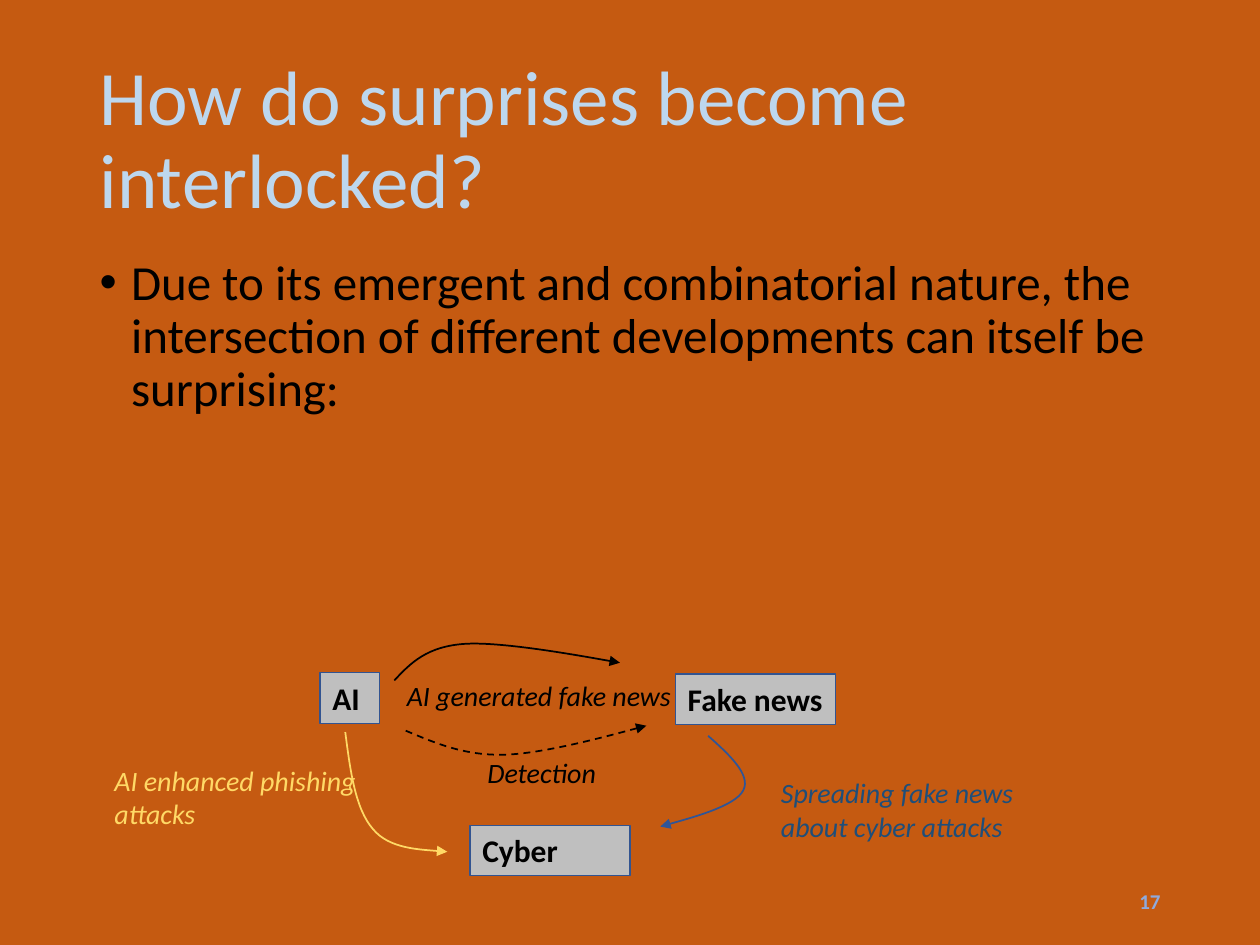
from typing import NamedTuple

from lxml.etree import SubElement
from pptx import Presentation
from pptx.dml.color import RGBColor
from pptx.enum.dml import MSO_LINE
from pptx.enum.shapes import MSO_SHAPE
from pptx.enum.text import MSO_ANCHOR, MSO_AUTO_SIZE, PP_ALIGN
from pptx.oxml.ns import qn
from pptx.util import Emu, Inches, Pt

COLUMNS, ROWS = 100, 75
CELL = Inches(0.1)
FONT = "Calibri"

ORANGE = RGBColor(0xC5, 0x5A, 0x11)
PALE_BLUE = RGBColor(0xBD, 0xD7, 0xEE)
SOFT_BLUE = RGBColor(0x8F, 0xAA, 0xDC)
BORDER_BLUE = RGBColor(0x32, 0x54, 0x91)
ARROW_BLUE = RGBColor(0x2F, 0x55, 0x97)
DEEP_BLUE = RGBColor(0x1F, 0x4E, 0x79)
YELLOW = RGBColor(0xFF, 0xD9, 0x66)
GRAY = RGBColor(0xBF, 0xBF, 0xBF)
BLACK = RGBColor(0, 0, 0)


class Area(NamedTuple):
    column: float
    row: float
    columns: float
    rows: float


class Topic(NamedTuple):
    text: str
    area: Area
    wrap: bool = True


class Influence(NamedTuple):
    text: str
    area: Area
    color: RGBColor
    arrow_color: RGBColor
    curve: list[tuple[float, float]]
    dashed: bool = False
    wrap: bool = True


TOPICS = [
    Topic("AI", Area(25.4, 53.4, 4.7, 4)),
    Topic("Fake news", Area(53.6, 53.5, 12.7, 4), wrap=False),
    Topic("Cyber", Area(37.3, 65.5, 12.7, 4)),
]

INFLUENCES = [
    Influence("AI generated fake news", Area(31.3, 53.4, 23.2, 3.7), BLACK, BLACK,
              [(31.3, 54), (32.6, 52.6), (33.9, 51.3), (36.9, 51.1),
               (39.9, 50.9), (49.2, 52.6), (49.2, 52.6)], wrap=False),
    Influence("AI enhanced phishing attacks", Area(8.1, 60.1, 23.2, 6.4), YELLOW, YELLOW,
              [(27.4, 58.1), (27.8, 61.2), (28.2, 64.2), (29.6, 65.8),
               (30.9, 67.4), (35.5, 67.6), (35.5, 67.6)]),
    Influence("Detection", Area(37.7, 59.5, 12, 3.7), BLACK, BLACK,
              [(32.2, 58), (34.6, 59), (36.9, 60), (40.1, 59.9),
               (43.3, 59.8), (51.3, 57.6), (51.3, 57.6)], dashed=True),
    Influence("Spreading fake news about cyber attacks", Area(61, 61.1, 25.6, 6.4),
              DEEP_BLUE, ARROW_BLUE,
              [(56.2, 58.4), (57.9, 59.9), (59.6, 61.5), (59, 62.7),
               (58.4, 64), (52.4, 65.6), (52.4, 65.6)]),
]


def cells(count: float) -> Emu:
    return Emu(round(count * CELL))


def place(shape, area: Area) -> None:
    shape.left, shape.top, shape.width, shape.height = map(cells, area)


def write(shape, text: str, *, size: float, color: RGBColor, bold: bool = False,
          italic: bool = False, align=PP_ALIGN.LEFT, anchor=MSO_ANCHOR.TOP,
          spacing: float = 1.0, wrap: bool = True, bullet: str = "") -> None:
    frame = shape.text_frame
    frame.text = text
    frame.word_wrap = wrap
    frame.auto_size = MSO_AUTO_SIZE.NONE
    frame.vertical_anchor = anchor
    paragraph = frame.paragraphs[0]
    if bullet:
        properties = paragraph._p.get_or_add_pPr()
        properties.set("marL", str(Inches(0.25)))
        properties.set("indent", str(-Inches(0.25)))
        SubElement(properties, qn("a:buFont")).set("typeface", "Arial")
        SubElement(properties, qn("a:buChar")).set("char", bullet)
    paragraph.alignment = align
    paragraph.line_spacing = spacing
    paragraph.space_before = Pt(0)
    font = paragraph.runs[0].font
    font.name, font.size, font.bold, font.italic = FONT, Pt(size), bold, italic
    font.color.rgb = color


def draw_topic(shapes, topic: Topic) -> None:
    box = shapes.add_shape(MSO_SHAPE.RECTANGLE, *map(cells, topic.area))
    box.shadow.inherit = False
    box.fill.solid()
    box.fill.fore_color.rgb = GRAY
    box.line.color.rgb = BORDER_BLUE
    box.line.width = Pt(0.75)
    write(box, topic.text, size=18, color=BLACK, bold=True, wrap=topic.wrap)


def draw_curve(shapes, influence: Influence) -> None:
    start, *controls = [(cells(x), cells(y)) for x, y in influence.curve]
    builder = shapes.build_freeform(*start)
    builder.add_line_segments(controls, close=False)
    arrow = builder.convert_to_shape()
    outline = arrow._element.find(".//" + qn("a:path"))
    segments = outline.findall(qn("a:lnTo"))
    for first in range(0, len(segments), 3):
        bezier = SubElement(outline, qn("a:cubicBezTo"))
        for segment in segments[first:first + 3]:
            bezier.append(segment[0])
            outline.remove(segment)
    arrow.shadow.inherit = False
    arrow.fill.background()
    arrow.line.color.rgb = influence.arrow_color
    arrow.line.width = Pt(1)
    if influence.dashed:
        arrow.line.dash_style = MSO_LINE.DASH
    SubElement(arrow.line._get_or_add_ln(), qn("a:tailEnd")).set("type", "triangle")


def draw_influence(shapes, influence: Influence) -> None:
    draw_curve(shapes, influence)
    label = shapes.add_textbox(*map(cells, influence.area))
    write(label, influence.text, size=16, color=influence.color, italic=True,
          wrap=influence.wrap)


def main() -> None:
    deck = Presentation()
    deck.slide_width, deck.slide_height = cells(COLUMNS), cells(ROWS)
    slide = deck.slides.add_slide(deck.slide_layouts[1])
    slide.background.fill.solid()
    slide.background.fill.fore_color.rgb = ORANGE
    shapes = slide.shapes

    question = shapes.title
    place(question, Area(6.9, 4, 86.2, 14.5))
    write(question, "How do surprises become interlocked?", size=44, color=PALE_BLUE,
          anchor=MSO_ANCHOR.MIDDLE, spacing=0.9)

    explanation = slide.placeholders[1]
    place(explanation, Area(6.9, 20, 86.2, 18.6))
    write(explanation, "Due to its emergent and combinatorial nature, the intersection "
          "of different developments can itself be surprising:",
          size=28, color=BLACK, spacing=0.9, bullet="•")

    page_number = shapes.add_textbox(*map(cells, Area(70.6, 69.5, 22.5, 4)))
    write(page_number, "17", size=12, color=SOFT_BLUE, bold=True,
          align=PP_ALIGN.RIGHT, anchor=MSO_ANCHOR.MIDDLE)

    for topic in TOPICS:
        draw_topic(shapes, topic)
    for influence in INFLUENCES:
        draw_influence(shapes, influence)

    deck.save("out.pptx")


if __name__ == "__main__":
    main()
